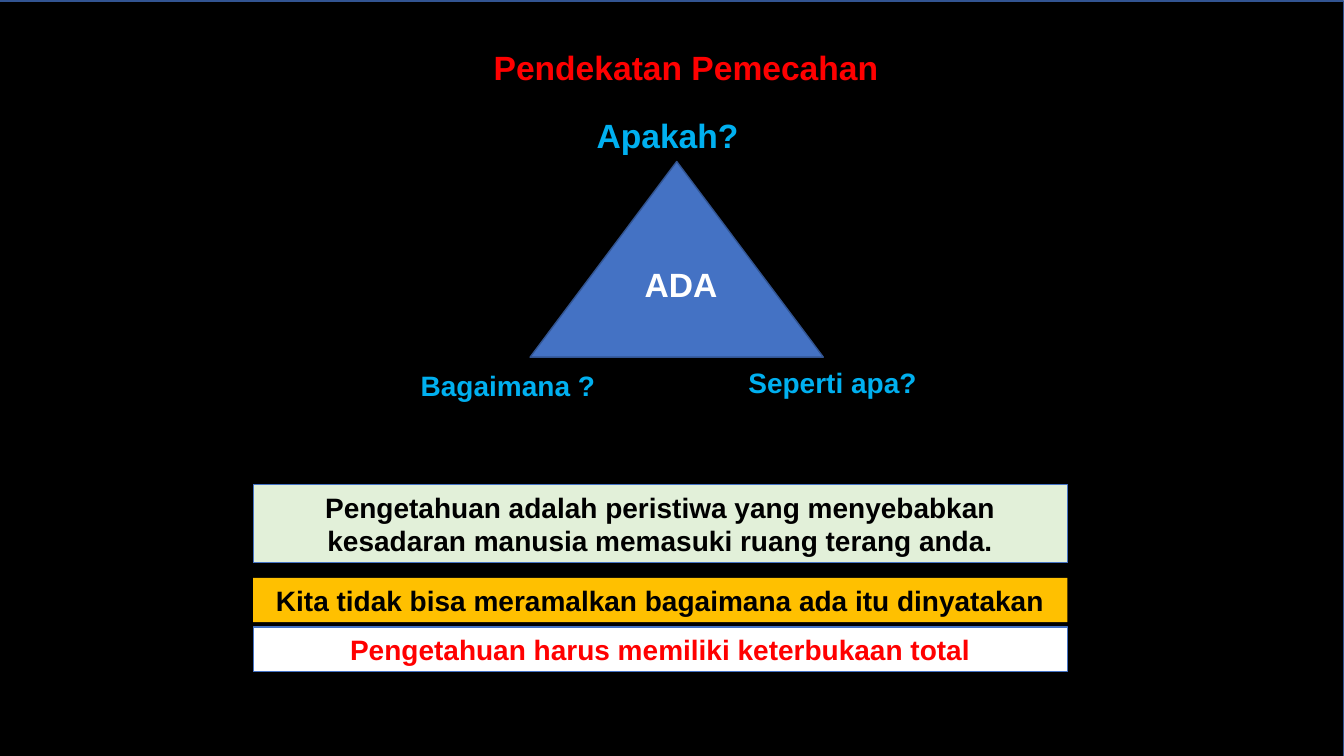
"""Builds a slide on the problem-solving approach with a triangle of questions."""
from pptx import Presentation
from pptx import util as u
from pptx.dml.color import RGBColor
from pptx.enum import shapes, text

BLACK = RGBColor(0x00, 0x00, 0x00)
WHITE = RGBColor(0xFF, 0xFF, 0xFF)
RED = RGBColor(0xFF, 0x00, 0x00)
SKY = RGBColor(0x00, 0xB0, 0xF0)
BLUE = RGBColor(0x44, 0x72, 0xC4)
NAVY = RGBColor(0x32, 0x54, 0x91)
MINT = RGBColor(0xE2, 0xF0, 0xD9)
AMBER = RGBColor(0xFF, 0xC0, 0x00)


def write(shape, words, *, size=20, color=BLACK):
    """Set centred bold text in a shape that grows with it."""
    frame = shape.text_frame
    frame.word_wrap = True
    frame.auto_size = text.MSO_AUTO_SIZE.SHAPE_TO_FIT_TEXT
    para = frame.paragraphs[0]
    para.alignment = text.PP_ALIGN.CENTER
    span = para.add_run()
    span.text = words
    span.font.name = "Arial"
    span.font.size = u.Pt(size)
    span.font.bold = True
    span.font.color.rgb = color


def add_label(page, box, words, **style):
    """Add a text box at box, given in centimetres."""
    label = page.shapes.add_textbox(*map(u.Cm, box))
    write(label, words, **style)


def add_figure(page, kind, box, fill, line=None, width=1):
    """Add a filled preset shape at box, given in centimetres."""
    figure = page.shapes.add_shape(kind, *map(u.Cm, box))
    figure.shadow.inherit = False
    figure.fill.solid()
    figure.fill.fore_color.rgb = fill
    if line is None:
        figure.line.fill.background()
    else:
        figure.line.color.rgb = line
        figure.line.width = u.Pt(width)
    return figure


def add_backdrop(page, box):
    """Cover the page with a black panel."""
    add_figure(page, shapes.MSO_SHAPE.RECTANGLE, box, BLACK, NAVY)


def add_question_triangle(page, box):
    """Place the triangle with a question at each corner and its core word."""
    left, top, width, height = box
    corner_width = 7.62
    add_figure(page, shapes.MSO_SHAPE.ISOSCELES_TRIANGLE,
               (left + 4.27, top + 1.3, 7.39, 4.93), BLUE, NAVY)
    add_label(page, (left + 4.04, top, corner_width, 1.3),
              "Apakah? ", size=24, color=SKY)
    add_label(page, (left, top + height - 1.12, corner_width, 1.12),
              "Bagaimana ? ", color=SKY)
    add_label(page, (left + width - corner_width, top + height - 1.2, corner_width, 1.12),
              "Seperti apa? ", color=SKY)
    add_label(page, (left + 5.23, top + 3.76, 5.89, 1.3),
              "ADA ", size=24, color=WHITE)


def add_statements(page, box):
    """Stack the coloured statement bars inside the box."""
    left, top, width, height = box
    bars = (
        (0, 1.96, MINT, BLUE, BLACK,
         "Pengetahuan adalah peristiwa yang menyebabkan kesadaran manusia "
         "memasuki ruang terang anda."),
        (2.34, 1.12, AMBER, None, BLACK,
         "Kita tidak bisa meramalkan bagaimana ada itu dinyatakan"),
        (height - 1.12, 1.12, WHITE, BLUE, RED,
         "Pengetahuan harus memiliki keterbukaan total"),
    )
    for offset, bar_height, fill, line, color, words in bars:
        bar = add_figure(page, shapes.MSO_SHAPE.RECTANGLE,
                         (left, top + offset, width, bar_height), fill, line, 0.75)
        write(bar, words, color=color)


def main():
    """Build and save the deck."""
    deck = Presentation()
    deck.slide_width, deck.slide_height = u.Cm(33.87), u.Cm(19.05)
    page = deck.slides.add_slide(deck.slide_layouts[6])
    add_backdrop(page, (-0.05, 0.03, 33.91, 19.05))
    add_label(page, (9.48, 1.07, 15.85, 1.27),
              "Pendekatan Pemecahan ", size=24, color=RED)
    add_question_triangle(page, (9.09, 2.77, 15.8, 7.52))
    add_statements(page, (6.38, 12.22, 20.52, 4.7))
    deck.save("out.pptx")


if __name__ == "__main__":
    main()
